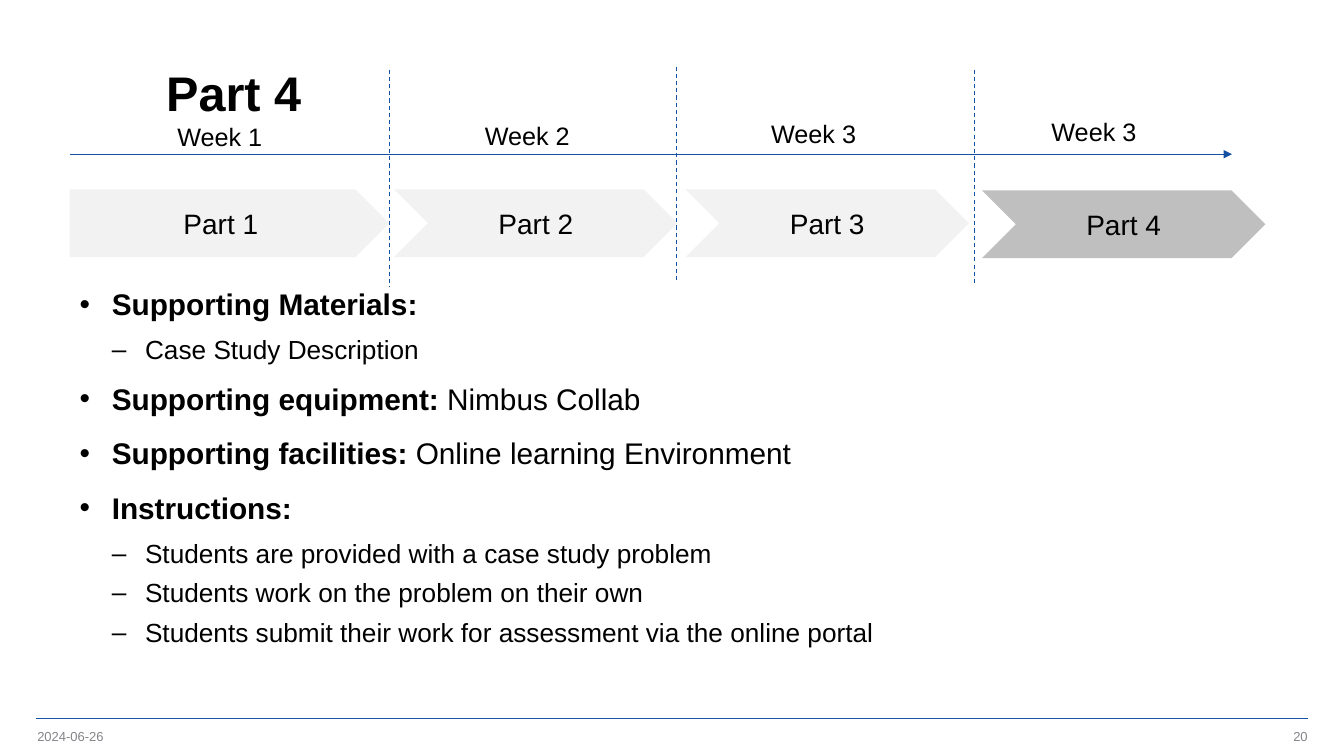
import pptx
import pptx.dml.color
import pptx.enum.dml
import pptx.enum.shapes
import pptx.enum.text
import pptx.oxml
import pptx.oxml.ns
import pptx.util
from pptx.util import Inches

FONT = "Arial"
BLACK, GREY, PALE, ACTIVE = "000000", "848489", "F2F2F2", "BFBFBF"
RULE_BLUE, TIMELINE_BLUE = "1954A6", "1451A5"
ALIGN = pptx.enum.text.PP_ALIGN
ANCHOR = pptx.enum.text.MSO_ANCHOR
PRESET = pptx.enum.shapes.MSO_SHAPE

# Timeline entries: preset, left, top, width, fill, label
PARTS = [
    (PRESET.PENTAGON, 0.69, 1.88, 3.17, PALE, "Part 1"),
    (PRESET.CHEVRON, 3.91, 1.88, 2.81, PALE, "Part 2"),
    (PRESET.CHEVRON, 6.8, 1.88, 2.81, PALE, "Part 3"),
    (PRESET.CHEVRON, 9.74, 1.89, 2.81, ACTIVE, "Part 4"),
]
WEEKS = [(1.66, 1.15, "Week 1"), (4.71, 1.14, "Week 2"),
         (7.55, 1.12, "Week 3"), (10.33, 1.1, "Week 3")]
DIVIDERS = [(3.86, 0.69, 2.84), (6.71, 0.66, 2.8), (9.67, 0.69, 2.83)]

# Body lines: level, space before, bold lead, plain text
DETAILS = [
    (0, 0, "Supporting Materials:", ""),
    (1, 10.7, "", "Case Study Description"),
    (0, 13.3, "Supporting equipment: ", "Nimbus Collab"),
    (0, 16, "Supporting facilities: ", "Online learning Environment"),
    (0, 16, "Instructions:", ""),
    (1, 10.7, "", "Students are provided with a case study problem"),
    (1, 8, "", "Students work on the problem on their own"),
    (1, 8, "", "Students submit their work for assessment via the online portal"),
]
# Per level: bullet, text indent, hanging indent, size
LEVELS = [("•", 0.32, -0.32, 21.3), ("–", 0.65, -0.33, 18.7)]


def color(hex_code):
    return pptx.dml.color.RGBColor.from_string(hex_code)


def xml(tag, attributes=""):
    namespace = pptx.oxml.ns.nsdecls("a")
    return pptx.oxml.parse_xml(f"<a:{tag} {namespace} {attributes}/>")


def style_run(run, size, hex_code=BLACK, bold=False):
    run.font.name = FONT
    run.font.size = pptx.util.Pt(size)
    run.font.bold = bold
    run.font.color.rgb = color(hex_code)


def add_label(slide, left, top, width, height, text, size, hex_code=BLACK,
              bold=False, align=ALIGN.LEFT, anchor=ANCHOR.TOP, inset=True, wrap=True):
    box = slide.shapes.add_textbox(Inches(left), Inches(top), Inches(width), Inches(height))
    frame = box.text_frame
    frame.text = text
    frame.word_wrap = wrap
    frame.vertical_anchor = anchor
    if not inset:
        frame.margin_left = frame.margin_right = 0
        frame.margin_top = frame.margin_bottom = 0
    paragraph = frame.paragraphs[0]
    paragraph.alignment = align
    style_run(paragraph.runs[0], size, hex_code, bold)
    return paragraph


def add_line(slide, x1, y1, x2, y2, hex_code=TIMELINE_BLUE, width=0.75,
             dashed=False, arrow=False):
    line = slide.shapes.add_connector(
        pptx.enum.shapes.MSO_CONNECTOR.STRAIGHT,
        Inches(x1), Inches(y1), Inches(x2), Inches(y2))
    line.line.color.rgb = color(hex_code)
    line.line.width = pptx.util.Pt(width)
    if dashed:
        line.line.dash_style = pptx.enum.dml.MSO_LINE.DASH
    if arrow:
        line.line._get_or_add_ln().append(xml("tailEnd", 'type="triangle"'))
    line._element.spPr.append(xml("effectLst"))


def add_part(slide, preset, left, top, width, fill, label):
    part = slide.shapes.add_shape(
        preset, Inches(left), Inches(top), Inches(width), Inches(0.67))
    part.shadow.inherit = False
    part.fill.solid()
    part.fill.fore_color.rgb = color(fill)
    part.line.fill.background()
    frame = part.text_frame
    frame.text = label
    frame.vertical_anchor = ANCHOR.MIDDLE
    frame.paragraphs[0].alignment = ALIGN.CENTER
    style_run(frame.paragraphs[0].runs[0], 20)


def add_details(slide):
    box = slide.shapes.add_textbox(Inches(0.69), Inches(2.83), Inches(11.89), Inches(3.72))
    frame = box.text_frame
    frame.word_wrap = True
    for index, (level, space, lead, text) in enumerate(DETAILS):
        paragraph = frame.add_paragraph() if index else frame.paragraphs[0]
        bullet, indent, hanging, size = LEVELS[level]
        properties = paragraph._p.get_or_add_pPr()
        properties.set("marL", str(Inches(indent)))
        properties.set("indent", str(Inches(hanging)))
        properties.append(xml("buFont", f'typeface="{FONT}"'))
        properties.append(xml("buChar", f'char="{bullet}"'))
        paragraph.level = level
        paragraph.line_spacing = 0.9
        paragraph.space_before = pptx.util.Pt(space)
        for words, bold in ((lead, True), (text, False)):
            if words:
                run = paragraph.add_run()
                run.text = words
                style_run(run, size, bold=bold)


def main():
    deck = pptx.Presentation()
    deck.slide_width, deck.slide_height = Inches(13.33), Inches(7.5)
    slide = deck.slides.add_slide(deck.slide_layouts[6])

    # Footer
    add_line(slide, 0.36, 7.13, 12.97, 7.13, RULE_BLUE, 1)
    for left, text, align in ((0.37, "2024-06-26", ALIGN.LEFT), (9.97, "20", ALIGN.RIGHT)):
        add_label(slide, left, 7.22, 3, 0.17, text, 9.3, GREY,
                  align=align, anchor=ANCHOR.MIDDLE, inset=False)

    # Title and details
    title = add_label(slide, 1.55, 0.37, 11.01, 0.98, "Part 4", 34.7,
                      bold=True, anchor=ANCHOR.MIDDLE)
    title.line_spacing = 1.18
    add_details(slide)

    # Timeline
    add_line(slide, 0.69, 1.53, 12.22, 1.53, arrow=True)
    for part in PARTS:
        add_part(slide, *part)
    for x, top, bottom in DIVIDERS:
        add_line(slide, x, top, x, bottom, dashed=True)
    for left, top, week in WEEKS:
        add_label(slide, left, top, 1.05, 0.4, week, 18, wrap=False)

    deck.save("out.pptx")


if __name__ == "__main__":
    main()
